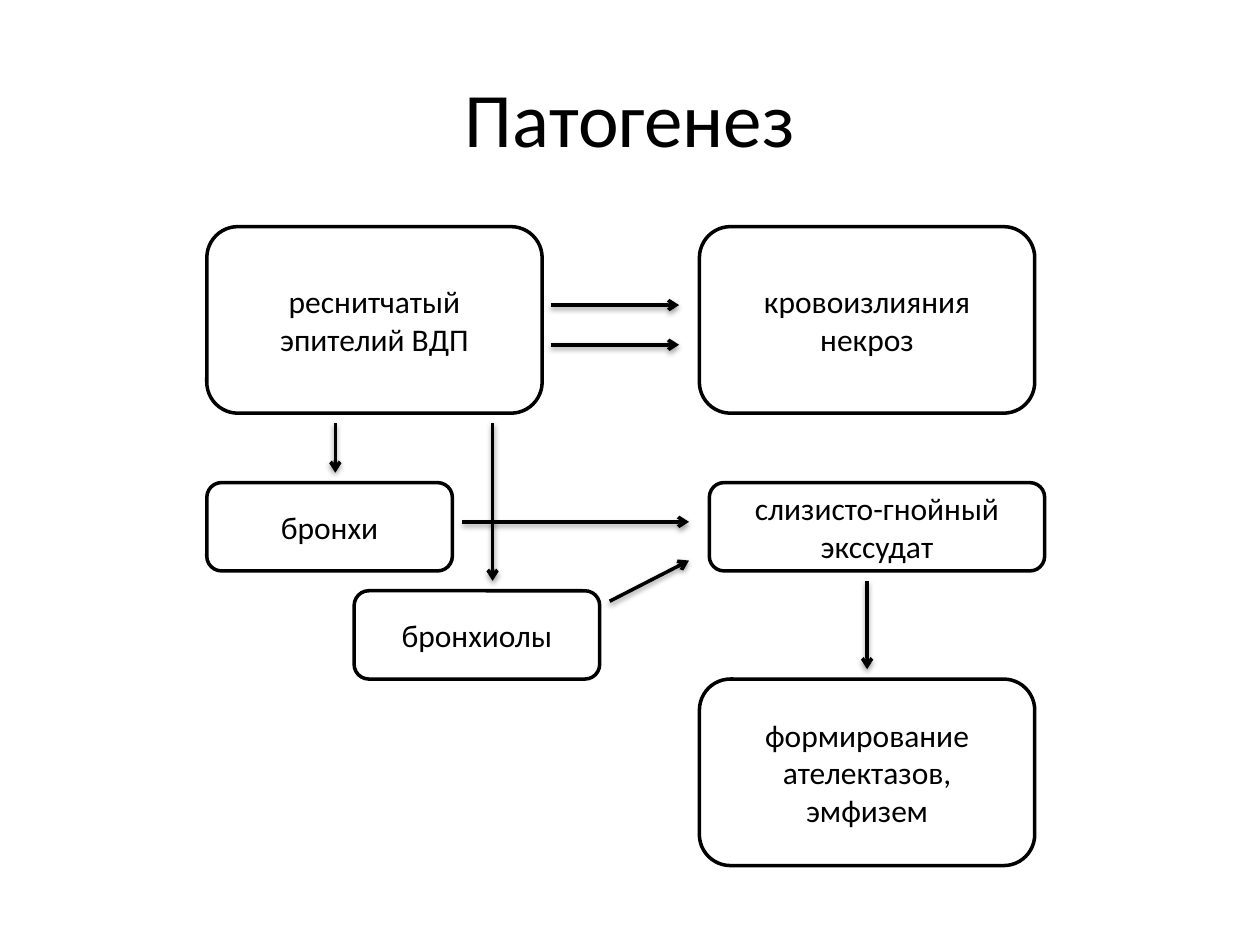
from lxml import etree
from pptx import Presentation
from pptx import util as u
from pptx.dml import color
from pptx.enum import shapes, text
from pptx.oxml import ns

HUES = {"ink": "000000", "paper": "FFFFFF"}
WIDE, TALL = 6.76, 3.76
SLIM, LOW = 4.95, 1.78
LEFT, RIGHT = 4.17, 14.1
TOP, ROW = 4.57, 9.73


class Chart:
    def __init__(self, slide):
        self.slide = slide
        self.font = "Calibri"
        self.ink = color.RGBColor.from_string(HUES["ink"])
        self.paper = color.RGBColor.from_string(HUES["paper"])

    def label(self, shape, words, size):
        frame = shape.text_frame
        frame.word_wrap = True
        frame.vertical_anchor = text.MSO_ANCHOR.MIDDLE
        frame.text = words
        for line in frame.paragraphs:
            line.alignment = text.PP_ALIGN.CENTER
            for run in line.runs:
                run.font.name = self.font
                run.font.size = u.Pt(size)
                run.font.color.rgb = self.ink

    def title(self, words, *place):
        box = self.slide.shapes.add_textbox(*map(u.Cm, place))
        self.label(box, words, 44)

    def box(self, words, *place):
        kind = shapes.MSO_SHAPE.ROUNDED_RECTANGLE
        box = self.slide.shapes.add_shape(kind, *map(u.Cm, place))
        box.shadow.inherit = False
        box.fill.solid()
        box.fill.fore_color.rgb = self.paper
        box.line.color.rgb = self.ink
        box.line.width = u.Pt(2)
        self.label(box, words, 18)

    def arrow(self, *ends):
        kind = shapes.MSO_CONNECTOR.STRAIGHT
        link = self.slide.shapes.add_connector(kind, *map(u.Cm, ends))
        link.line.color.rgb = self.ink
        link.line.width = u.Pt(2)
        props = link.element.spPr
        line = props.find(ns.qn("a:ln"))
        etree.SubElement(line, ns.qn("a:tailEnd"), type="arrow")
        group = etree.SubElement(props, ns.qn("a:effectLst"))
        shade = etree.SubElement(
            group, ns.qn("a:outerShdw"), blurRad=str(u.Pt(3.1)),
            dist=str(u.Pt(1.6)), dir="5400000", rotWithShape="0",
        )
        tone = etree.SubElement(shade, ns.qn("a:srgbClr"), val=HUES["ink"])
        etree.SubElement(tone, ns.qn("a:alpha"), val="38000")


def main():
    deck = Presentation()
    deck.slide_width, deck.slide_height = u.Cm(25.4), u.Cm(19.05)
    chart = Chart(deck.slides.add_slide(deck.slide_layouts[6]))

    chart.title("Патогенез", 1.27, 0.76, 22.86, 3.18)

    boxes = [
        ("реснитчатый эпителий BДП", LEFT, TOP, WIDE, TALL),
        ("кровоизлияния\nнекроз", RIGHT, TOP, WIDE, TALL),
        ("бронхи", LEFT, ROW, SLIM, LOW),
        ("бронхиолы", 7.14, 11.91, SLIM, LOW),
        ("слизисто-гнойный экссудат", 14.3, ROW, WIDE, LOW),
        ("формирование ателектазов, эмфизем", RIGHT, 13.69, WIDE, TALL),
    ]
    for box in boxes:
        chart.box(*box)

    arrows = [
        (11.1, 6.15, 13.69, 6.15),
        (11.1, 6.95, 13.69, 6.95),
        (6.76, 8.53, 6.76, 9.53),
        (9.93, 8.53, 9.93, 11.71),
        (9.32, 10.52, 13.89, 10.52),
        (12.29, 12.12, 13.89, 11.3),
        (17.48, 11.71, 17.48, 13.49),
    ]
    for ends in arrows:
        chart.arrow(*ends)

    deck.save("out.pptx")


if __name__ == "__main__":
    main()
